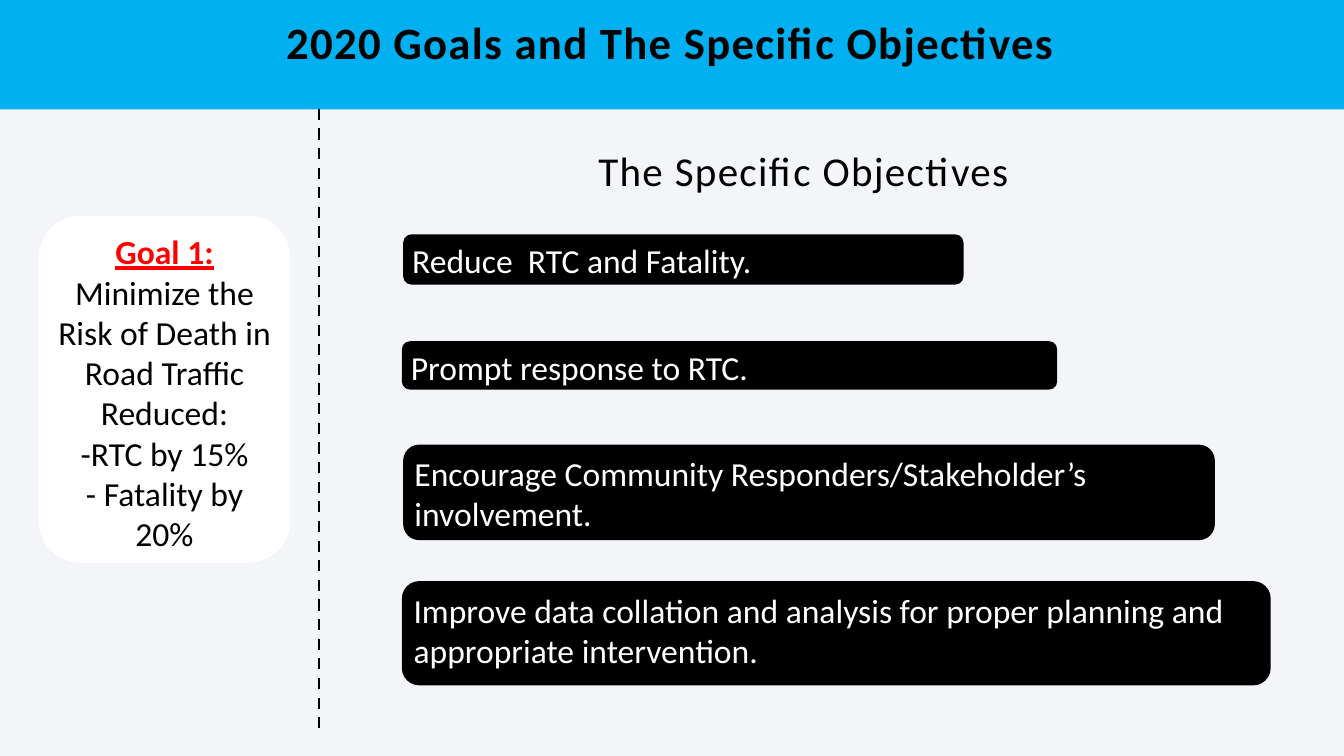
import pptx
import pptx.dml.color
import pptx.enum.dml
import pptx.enum.shapes
import pptx.enum.text
import pptx.oxml.ns
import pptx.util
from lxml import etree

Cm, Pt = pptx.util.Cm, pptx.util.Pt
SHAPE = pptx.enum.shapes.MSO_SHAPE
CENTER = pptx.enum.text.PP_ALIGN.CENTER
LEFT = pptx.enum.text.PP_ALIGN.LEFT

HEADING = "2020 Goals and The Specific Objectives"
SUBHEADING = "The Specific Objectives"
GOAL_LABEL = "Goal 1:"
GOAL_LINES = [
    "Minimize the Risk of Death in Road Traffic",
    "Reduced:",
    "-RTC by 15%",
    "- Fatality by 20%",
]
# text, left, top, width, height in cm
OBJECTIVES = [
    ("Reduce  RTC and Fatality.", 15.24, 8.86, 21.18, 1.9),
    ("Prompt response to RTC.", 15.19, 12.9, 24.77, 1.83),
    ("Encourage Community Responders/Stakeholder’s involvement.",
     15.24, 16.81, 30.68, 3.61),
    ("Improve data collation and analysis for proper planning and "
     "appropriate intervention.", 15.19, 21.97, 32.84, 3.94),
]
INK, BLACK, WHITE, RED = "020301", "000000", "FFFFFF", "FF0000"
SKY, PALE = "00B0F0", "F3F5F9"
BODY_FONT = {"name": "Calibri", "size": Pt(36), "bold": False}
FLUSH_FRAME = {
    "margin_left": 0, "margin_top": 0, "margin_right": 0, "margin_bottom": 0,
    "word_wrap": True,
    "auto_size": pptx.enum.text.MSO_AUTO_SIZE.NONE,
    "vertical_anchor": pptx.enum.text.MSO_ANCHOR.TOP,
}


def apply(target, values):
    for name, value in values.items():
        setattr(target, name, value)


def paint(color_format, color):
    color_format.rgb = pptx.dml.color.RGBColor.from_string(color)


def place(part, *box):
    apply(part, dict(zip(("left", "top", "width", "height"), map(Cm, box))))


def write(paragraph, text, color, align, **extra):
    run = paragraph.add_run()
    run.text = text
    paragraph.alignment = align
    apply(run.font, {**BODY_FONT, **extra})
    paint(run.font.color, color)
    return run


def add_block(kind, color, *box):
    block = slide.shapes.add_shape(kind, *map(Cm, box))
    block.shadow.inherit = False
    block.fill.solid()
    paint(block.fill.fore_color, color)
    block.line.fill.background()
    block.text_frame.vertical_anchor = pptx.enum.text.MSO_ANCHOR.TOP
    return block


def write_heading(part, text, size, bold):
    """Fill a frame without margins with one centred, letter-spaced line."""
    apply(part.text_frame, FLUSH_FRAME)
    paragraph = part.text_frame.paragraphs[0]
    apply(paragraph, {"line_spacing": Pt(67.2), "space_before": Pt(0)})
    run = write(paragraph, text, INK, CENTER, size=Pt(size), bold=bold)
    run.font._element.set("spc", "140")


deck = pptx.Presentation()
apply(deck, {"slide_width": Cm(50.8), "slide_height": Cm(28.58)})
slide = deck.slides.add_slide(deck.slide_layouts[5])
slide.background.fill.solid()
paint(slide.background.fill.fore_color, PALE)

heading = slide.shapes.title
place(heading, 6.73, 0.23, 37.21, 2.24)
write_heading(heading, HEADING, 48, True)
banner = add_block(SHAPE.RECTANGLE, SKY, -0.84, -0.84, 52.93, 4.98)
heading.element.addprevious(banner.element)  # banner lies behind the heading

goal = add_block(SHAPE.ROUNDED_RECTANGLE, WHITE, 1.47, 8.15, 9.5, 13.13)
write(goal.text_frame.paragraphs[0], GOAL_LABEL, RED, CENTER,
      bold=True, underline=True)
for line in GOAL_LINES:
    write(goal.text_frame.add_paragraph(), line, BLACK, CENTER)

divider = slide.shapes.add_connector(
    pptx.enum.shapes.MSO_CONNECTOR.STRAIGHT,
    Cm(12.06), Cm(4.11), Cm(12.06), Cm(27.74))
apply(divider.line, {"width": Pt(3),
                     "dash_style": pptx.enum.dml.MSO_LINE.DASH})
paint(divider.line.color, BLACK)
etree.SubElement(divider.element.spPr, pptx.oxml.ns.qn("a:effectLst"))

subheading = slide.shapes.add_textbox(Cm(12.7), Cm(4.98), Cm(35.36), Cm(2.39))
write_heading(subheading, SUBHEADING, 44, False)

for objective, *box in OBJECTIVES:
    bar = add_block(SHAPE.ROUNDED_RECTANGLE, BLACK, *box)
    write(bar.text_frame.paragraphs[0], objective, WHITE, LEFT)

deck.save("out.pptx")
